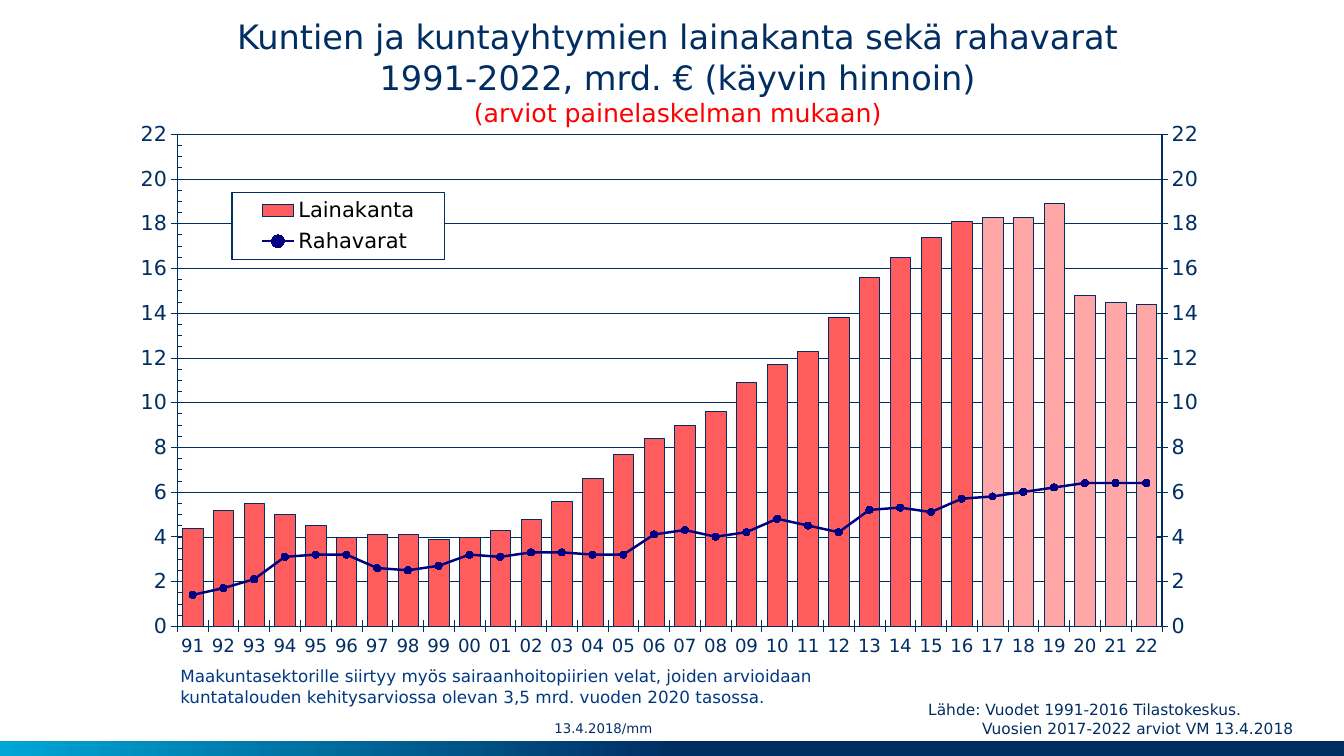
import copy

import pptx
import pptx.chart.data
import pptx.dml.color
import pptx.enum.chart
import pptx.enum.dml
import pptx.enum.shapes
import pptx.enum.text
import pptx.oxml
import pptx.oxml.ns
import pptx.util

Pt = pptx.util.Pt
RGB = pptx.dml.color.RGBColor.from_string
qn = pptx.oxml.ns.qn
NS = pptx.oxml.ns.nsdecls("c", "a")
ANCHOR = pptx.enum.text.MSO_ANCHOR
TICK = pptx.enum.chart.XL_TICK_MARK
FONT = "DejaVu Sans"
COLORS = {
    "navy": "002E63", "cyan": "00A6D6", "note": "003882", "red": "FF0000",
    "loan": "FF5D5D", "forecast": "FFA7A7", "cash": "000080", "black": "000000",
}


def add_text(p, text, size, color="navy"):
    for i, line in enumerate(text.split("\n")):
        if i:
            p.add_line_break()
        r = p.add_run()
        r.text = line
        r.font.size = Pt(size)
        r.font.name = FONT
        r.font.color.rgb = RGB(COLORS[color])


def set_layout(parent, index, x, y, w, h, target=""):
    for old in parent.findall(qn("c:layout")):
        parent.remove(old)
    parent.insert(index, pptx.oxml.parse_xml(
        f'<c:layout {NS}><c:manualLayout>{target}'
        '<c:xMode val="edge"/><c:yMode val="edge"/>'
        f'<c:x val="{x}"/><c:y val="{y}"/><c:w val="{w}"/><c:h val="{h}"/>'
        '</c:manualLayout></c:layout>'))


prs = pptx.Presentation()
prs.slide_width = Pt(960)
prs.slide_height = Pt(540)
s = prs.slides.add_slide(prs.slide_layouts[6])

sp = s.shapes.add_shape(pptx.enum.shapes.MSO_SHAPE.RECTANGLE, 0, Pt(529.2), Pt(960), Pt(10.8))
sp.shadow.inherit = False
sp.line.fill.background()
sp.fill.gradient()
sp.fill.gradient_angle = 180
for stop, position, color in zip(sp.fill.gradient_stops, (0.5, 1), ("navy", "cyan")):
    stop.position = position
    stop.color.rgb = RGB(COLORS[color])

years = [f"{year % 100:02d}" for year in range(1991, 2023)]
loans = [4.4, 5.2, 5.5, 5, 4.5, 4, 4.1, 4.1, 3.9, 4, 4.3, 4.8, 5.6, 6.6, 7.7, 8.4,
         9, 9.6, 10.9, 11.7, 12.3, 13.8, 15.6, 16.5, 17.4, 18.1, 18.3, 18.3, 18.9,
         14.8, 14.5, 14.4]
cash = [1.4, 1.7, 2.1, 3.1, 3.2, 3.2, 2.6, 2.5, 2.7, 3.2, 3.1, 3.3, 3.3, 3.2, 3.2, 4.1,
        4.3, 4, 4.2, 4.8, 4.5, 4.2, 5.2, 5.3, 5.1, 5.7, 5.8, 6, 6.2, 6.4, 6.4, 6.4]
data = pptx.chart.data.CategoryChartData()
data.categories = years
data.add_series("Lainakanta", loans)
data.add_series("Rahavarat", cash)
chart = s.shapes.add_chart(
    pptx.enum.chart.XL_CHART_TYPE.COLUMN_CLUSTERED,
    Pt(77.8), Pt(81.4), Pt(799.2), Pt(399.6), data).chart
chart.has_title = False
chart.font.name = FONT
chart.font.color.rgb = RGB(COLORS["navy"])

for axis, size in ((chart.category_axis, 13), (chart.value_axis, 14.7)):
    axis.major_tick_mark = TICK.CROSS
    axis.tick_labels.font.size = Pt(size)
    axis.tick_labels.font.name = FONT
    axis.tick_labels.font.color.rgb = RGB(COLORS["navy"])
    axis.format.line.color.rgb = RGB(COLORS["navy"])
    axis.format.line.width = Pt(0.3)
axis = chart.value_axis
axis.minimum_scale, axis.maximum_scale = 0, 22
axis.major_unit, axis.minor_unit = 2, 0.5
axis.minor_tick_mark = TICK.INSIDE
axis.tick_labels.number_format = "0"
axis.tick_labels.number_format_is_linked = False
grid = axis.major_gridlines.format.line
grid.color.rgb = RGB(COLORS["navy"])
grid.width = Pt(0.25)
grid.dash_style = pptx.enum.dml.MSO_LINE.ROUND_DOT

plot_area = chart._chartSpace.find(".//" + qn("c:plotArea"))
bar_chart = plot_area.find(qn("c:barChart"))
cat_axis = plot_area.find(qn("c:catAx"))
left_axis = plot_area.find(qn("c:valAx"))
if left_axis.find(qn("c:crossBetween")) is None:
    left_axis.find(qn("c:crosses")).addnext(
        pptx.oxml.parse_xml(f'<c:crossBetween {NS} val="between"/>'))

line_chart = pptx.oxml.parse_xml(
    f'<c:lineChart {NS}><c:grouping val="standard"/><c:varyColors val="0"/>'
    '<c:marker val="1"/><c:axId val="5001"/><c:axId val="5002"/></c:lineChart>')
cash_ser = bar_chart.findall(qn("c:ser"))[1]
for invert in cash_ser.findall(qn("c:invertIfNegative")):
    cash_ser.remove(invert)
line_chart.insert(2, cash_ser)
bar_chart.addnext(line_chart)

hidden_axis = copy.deepcopy(cat_axis)
right_axis = copy.deepcopy(left_axis)
right_axis.remove(right_axis.find(qn("c:majorGridlines")))
for ax, changes in (
    (hidden_axis, {"axId": "5001", "crossAx": "5002", "delete": "1"}),
    (right_axis, {"axId": "5002", "crossAx": "5001", "axPos": "r",
                  "crosses": "max", "minorTickMark": "none"}),
):
    for tag, value in changes.items():
        ax.find(qn("c:" + tag)).set("val", value)
left_axis.addnext(right_axis)
right_axis.addnext(hidden_axis)

set_layout(plot_area, 0, 0.061, 0.036, 0.88, 0.88, '<c:layoutTarget val="inner"/>')
outline = f'<a:ln w="9525"><a:solidFill><a:srgbClr val="{COLORS["navy"]}"/></a:solidFill></a:ln>'
plot_area.append(pptx.oxml.parse_xml(f'<c:spPr {NS}><a:noFill/>{outline}</c:spPr>'))

bars, line = chart.plots
bars.gap_width = 50
bars.vary_by_categories = False
loan_series = bars.series[0]
forecast_points = [loan_series.points[i] for i in range(years.index("17"), len(years))]
for part, color in [(loan_series, "loan")] + [(pt, "forecast") for pt in forecast_points]:
    part.format.fill.solid()
    part.format.fill.fore_color.rgb = RGB(COLORS[color])
    part.format.line.color.rgb = RGB(COLORS["navy"])
    part.format.line.width = Pt(0.25)

cash_series = line.series[0]
cash_series.smooth = False
cash_series.format.line.color.rgb = RGB(COLORS["cash"])
cash_series.format.line.width = Pt(1.75)
marker = cash_series.marker
marker.style = pptx.enum.chart.XL_MARKER_STYLE.CIRCLE
marker.size = 5
marker.format.fill.solid()
marker.format.fill.fore_color.rgb = RGB(COLORS["cash"])
marker.format.line.color.rgb = RGB(COLORS["cash"])

chart.has_legend = True
legend = chart.legend
legend.position = pptx.enum.chart.XL_LEGEND_POSITION.RIGHT
legend.include_in_layout = False
legend.font.size = Pt(15)
legend.font.name = FONT
legend.font.color.rgb = RGB(COLORS["black"])
set_layout(legend._element, 1, 0.11, 0.14, 0.19, 0.12)
legend._element.find(qn("c:txPr")).addprevious(pptx.oxml.parse_xml(
    f'<c:spPr {NS}><a:solidFill><a:srgbClr val="FFFFFF"/></a:solidFill>{outline}</c:spPr>'))

frames = {}
for name, box, anchor, margin_x, margin_y in (
    ("title", (145.4, 9.4, 677.5, 85), ANCHOR.BOTTOM, 0, 3.6),
    ("source", (655.9, 496.8, 289.4, 33.8), ANCHOR.TOP, 7.2, 3.6),
    ("date", (396, 508.3, 118, 23), ANCHOR.MIDDLE, 0, 0),
    ("note", (121.7, 472.3, 531.4, 49.7), ANCHOR.TOP, 7.2, 3.6),
):
    tf = s.shapes.add_textbox(*map(Pt, box)).text_frame
    tf.word_wrap = True
    tf.vertical_anchor = anchor
    tf.margin_left = tf.margin_right = Pt(margin_x)
    tf.margin_top = tf.margin_bottom = Pt(margin_y)
    frames[name] = tf

p = frames["title"].paragraphs[0]
p.alignment = pptx.enum.text.PP_ALIGN.CENTER
add_text(p, "Kuntien ja kuntayhtymien lainakanta sekä rahavarat\n1991-2022, mrd. € (käyvin hinnoin)", 24)
p.add_line_break()
add_text(p, "(arviot painelaskelman mukaan)", 18, color="red")

add_text(frames["source"].paragraphs[0], "Lähde: Vuodet 1991-2016 Tilastokeskus.", 11)
p = frames["source"].add_paragraph()
p._p.get_or_add_pPr().set("marL", str(Pt(38.5)))
add_text(p, "Vuosien 2017-2022 arviot VM 13.4.2018", 11)
add_text(frames["date"].paragraphs[0], "13.4.2018/mm", 9.5)
add_text(frames["note"].paragraphs[0],
         "Maakuntasektorille siirtyy myös sairaanhoitopiirien velat, joiden arvioidaan "
         "kuntatalouden kehitysarviossa olevan 3,5 mrd. vuoden 2020 tasossa.", 12, color="note")

prs.save("out.pptx")
